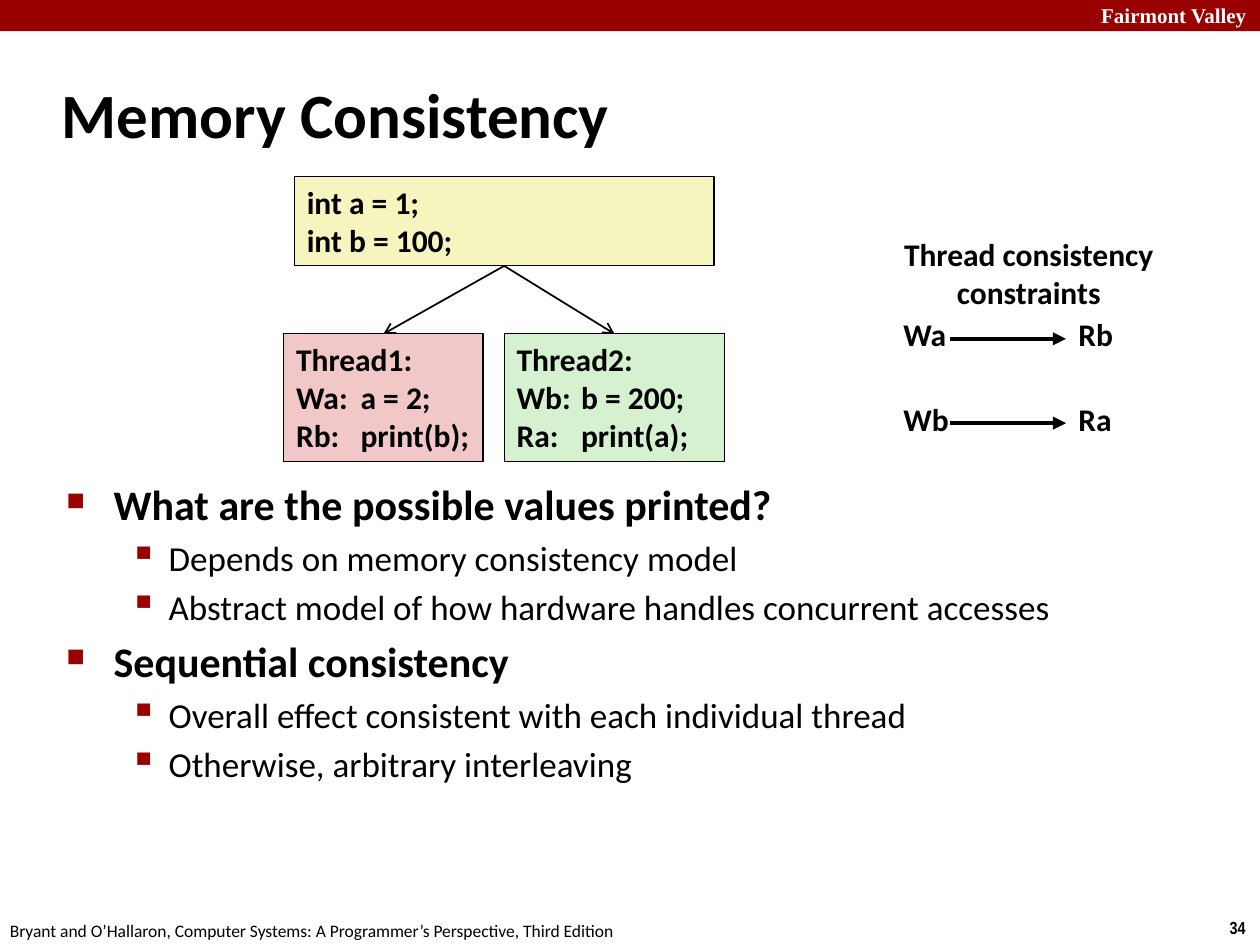
from lxml import etree
from pptx import Presentation
from pptx import util as u
from pptx.dml.color import RGBColor
from pptx.enum import shapes, text
from pptx.oxml.ns import qn

BLACK, WHITE, CRIMSON = "000000", "FFFFFF", "990000"
BODY_FONT = "Calibri"


def color(hex_value):
    return RGBColor.from_string(hex_value)


def cm(*lengths):
    return [u.Cm(length) for length in lengths]


def add_xml(parent, tag, **attributes):
    return etree.SubElement(parent, qn(tag), attributes)


def style(paragraph, size, bold=False, font=BODY_FONT, ink=BLACK):
    paragraph.font.size = u.Pt(size)
    paragraph.font.bold = bold
    paragraph.font.name = font
    paragraph.font.color.rgb = color(ink)


def write(frame, lines, size, align=text.PP_ALIGN.LEFT, **look):
    """Fill a text frame with equally styled paragraphs."""
    frame.text = "\n".join(lines)
    for paragraph in frame.paragraphs:
        paragraph.alignment = align
        style(paragraph, size, **look)


def add_label(slide, box, lines, size, **look):
    label = slide.shapes.add_textbox(*cm(*box))
    label.text_frame.word_wrap = False
    write(label.text_frame, lines, size, **look)


def add_box(slide, box, fill, outline=None):
    rect = slide.shapes.add_shape(shapes.MSO_SHAPE.RECTANGLE, *cm(*box))
    rect.shadow.inherit = False
    rect.fill.solid()
    rect.fill.fore_color.rgb = color(fill)
    if outline:
        rect.line.color.rgb = color(outline)
        rect.line.width = u.Pt(0.75)
    else:
        rect.line.fill.background()
    return rect


def add_code(slide, box, fill, lines):
    code = add_box(slide, box, fill, BLACK)
    frame = code.text_frame
    frame.word_wrap = True
    frame.vertical_anchor = text.MSO_ANCHOR.TOP
    write(frame, lines, 18, bold=True)
    for paragraph in frame.paragraphs:
        tabs = add_xml(paragraph._p.get_or_add_pPr(), "a:tabLst")
        add_xml(tabs, "a:tab", pos=str(u.Cm(1.3)), algn="l")


def add_arrow(slide, start, end, width, head):
    arrow = slide.shapes.add_connector(
        shapes.MSO_CONNECTOR.STRAIGHT, *cm(*start, *end))
    arrow.line.color.rgb = color(BLACK)
    arrow.line.width = u.Pt(width)
    properties = arrow._element.spPr
    add_xml(properties.find(qn("a:ln")), "a:tailEnd", type=head)
    add_xml(properties, "a:effectLst")


def add_page_frame(slide, width, height):
    """Top band with the school name, source line and page number."""
    add_box(slide, (0, 0, width, 0.63), CRIMSON)
    add_label(slide, (width - 3.45, -0.08, 3.63, 0.77), ["Fairmont Valley"],
              12, bold=True, font="Times New Roman", ink=WHITE)
    add_label(slide, (width - 0.86, height - 0.69, 0.86, 0.68), ["34"],
              10, bold=True, font="Arial Narrow")
    add_label(slide, (-0.05, height - 0.63, 12.9, 0.68),
              ["Bryant and O’Hallaron, Computer Systems: "
               "A Programmer’s Perspective, Third Edition"], 10)


def add_title(slide, box, wording):
    title = slide.shapes.title
    title.left, title.top, title.width, title.height = cm(*box)
    frame = title.text_frame
    frame.vertical_anchor = text.MSO_ANCHOR.MIDDLE
    write(frame, [wording], 36, bold=True)


def add_thread_diagram(slide, box):
    """Shared variables on top, branching to the two threads below."""
    left, top, width, height = box
    shared_width, shared_height = 8.46, 1.8
    thread_height = 2.57
    thread_top = top + height - thread_height
    middle = left + width / 2
    add_code(slide, (middle - shared_width / 2, top, shared_width, shared_height),
             "F6F5BD", ["int a = 1;", "int b = 100;"])
    threads = [
        (left, 4.02, "F1C7C7", ["Thread1:", "Wa:\ta = 2;", "Rb:\tprint(b);"]),
        (middle, width / 2, "D5F1CF", ["Thread2:", "Wb:\tb = 200;", "Ra:\tprint(a);"]),
    ]
    for thread_left, thread_width, fill, lines in threads:
        add_code(slide, (thread_left, thread_top, thread_width, thread_height),
                 fill, lines)
        add_arrow(slide, (middle, top + shared_height),
                  (thread_left + thread_width / 2, thread_top), 1, "arrow")


def add_constraints(slide, box):
    """Heading with one write-to-read arrow per thread."""
    left, top, width, _ = box
    add_label(slide, (left, top, width, 1.8),
              ["Thread consistency", "constraints"], 18,
              align=text.PP_ALIGN.CENTER, bold=True)
    for row, (before, after) in enumerate([("Wa", "Rb"), ("Wb", "Ra")]):
        row_top = top + 1.61 + row * 1.7
        arrow_y = row_top + 0.6
        add_label(slide, (left, row_top, 1.42, 1.02), [before], 18, bold=True)
        add_label(slide, (left + 3.53, row_top, 1.21, 1.02), [after], 18, bold=True)
        add_arrow(slide, (left + 1.2, arrow_y), (left + 3.53, arrow_y),
                  2.5, "triangle")


def add_bullets(slide, box, points):
    frame = slide.shapes.add_textbox(*cm(*box)).text_frame
    frame.word_wrap = True
    frame.text = "\n".join(wording for _, wording in points)
    # Per level: size, bold, left margin, hanging indent, bullet, bullet size
    levels = [(24, True, 0.95, 0.95, "■", 60), (20, False, 2.06, 0.79, "▪", 110)]
    for paragraph, (level, _) in zip(frame.paragraphs, points):
        size, bold, margin, hang, mark, percent = levels[level]
        paragraph.level = level
        paragraph.space_before = u.Pt(size * 0.2)
        style(paragraph, size, bold)
        properties = paragraph._p.get_or_add_pPr()
        properties.set("marL", str(u.Cm(margin)))
        properties.set("indent", str(-u.Cm(hang)))
        add_xml(add_xml(properties, "a:buClr"), "a:srgbClr", val=CRIMSON)
        add_xml(properties, "a:buSzPct", val=str(percent * 1000))
        add_xml(properties, "a:buChar", char=mark)


def main():
    width, height = 25.4, 19.05
    deck = Presentation()
    deck.slide_width, deck.slide_height = cm(width, height)
    slide = deck.slides.add_slide(deck.slide_layouts.get_by_name("Title Only"))
    add_page_frame(slide, width, height)
    add_title(slide, (0.99, 1.22, 21.08, 2.11), "Memory Consistency")
    add_bullets(slide, (1.09, 9.53, 21.95, 8.08), [
        (0, "What are the possible values printed?"),
        (1, "Depends on memory consistency model"),
        (1, "Abstract model of how hardware handles concurrent accesses"),
        (0, "Sequential consistency"),
        (1, "Overall effect consistent with each individual thread"),
        (1, "Otherwise, arbitrary interleaving"),
    ])
    add_thread_diagram(slide, (5.72, 3.56, 8.89, 5.74))
    add_constraints(slide, (17.96, 4.62, 5.56, 4.33))
    deck.save("out.pptx")


if __name__ == "__main__":
    main()
